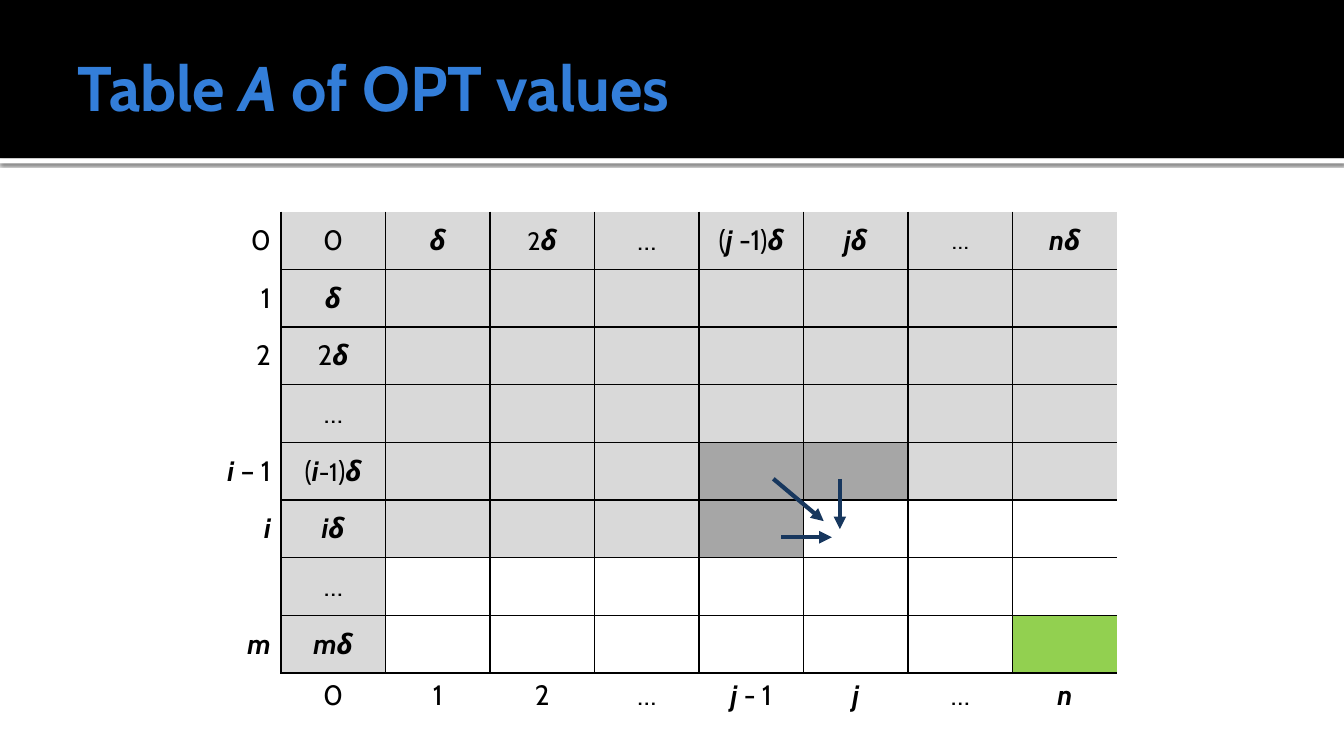
from itertools import groupby

from lxml import etree
from pptx import Presentation
from pptx.dml.color import RGBColor
from pptx.enum.shapes import MSO_CONNECTOR, MSO_SHAPE
from pptx.enum.text import MSO_ANCHOR, PP_ALIGN
from pptx.oxml import parse_xml
from pptx.oxml.ns import nsdecls, qn
from pptx.util import Inches, Pt

RECTANGLE = MSO_SHAPE.RECTANGLE
STRAIGHT = MSO_CONNECTOR.STRAIGHT
TOP, MIDDLE = MSO_ANCHOR.TOP, MSO_ANCHOR.MIDDLE
CENTER, RIGHT = PP_ALIGN.CENTER, PP_ALIGN.RIGHT

BLACK = RGBColor(0x00, 0x00, 0x00)
WHITE = RGBColor(0xFF, 0xFF, 0xFF)
TITLE_BLUE = RGBColor(0x33, 0x7E, 0xD9)
ARROW_BLUE = RGBColor(0x17, 0x37, 0x5E)
KNOWN_GRAY = RGBColor(0xD9, 0xD9, 0xD9)
SOURCE_GRAY = RGBColor(0xA6, 0xA6, 0xA6)
ANSWER_GREEN = RGBColor(0x92, 0xD0, 0x50)


def write(para, text, size=20, color=BLACK, bold=False, variables="ijmnδ", small=""):
    for (variable, reduced), letters in groupby(text, lambda c: (c in variables, c in small)):
        span = para.add_run()
        span.text = "".join(letters)
        span.font.name = "Cabin"
        span.font.size = Pt(18 if reduced else size)
        span.font.color.rgb = color
        span.font.bold = bold or variable
        span.font.italic = variable


def edge_line(side, visible):
    paint = f'<a:solidFill><a:srgbClr val="{BLACK}"/></a:solidFill>' if visible else "<a:noFill/>"
    return parse_xml(f'<a:{side} {nsdecls("a")} w="12700">{paint}</a:{side}>')


deck = Presentation()
deck.slide_width = Inches(13.33)
deck.slide_height = Inches(7.5)
page = deck.slides.add_slide(deck.slide_layouts[6])

for top, height, color in [(1.57, 0.05, WHITE), (0, 1.57, BLACK)]:
    band = page.shapes.add_shape(RECTANGLE, 0, Inches(top), Inches(13.33), Inches(height))
    band.shadow.inherit = False
    band.fill.solid()
    band.fill.fore_color.rgb = color
    band.line.fill.background()
    if color == WHITE:
        effects = band._element.spPr.find(qn("a:effectLst"))
        effects.append(parse_xml(
            f'<a:outerShdw {nsdecls("a")} blurRad="31750" dist="10160" dir="5400000" algn="tl" '
            'rotWithShape="0"><a:srgbClr val="000000"><a:alpha val="60000"/></a:srgbClr></a:outerShdw>'
        ))

title = page.shapes.add_textbox(Inches(0.67), Inches(0.17), Inches(12), Inches(1.37))
title.text_frame.word_wrap = True
title.text_frame.vertical_anchor = MIDDLE
title.text_frame.margin_right = Inches(0.05)
write(title.text_frame.paragraphs[0], "Table A of OPT values",
      size=45, color=TITLE_BLUE, bold=True, variables="A")

row_labels = ["0", "1", "2", "", "i – 1", "i", "", "m"]
first_column = ["0", "δ", "2δ", "…", "(i-1)δ", "iδ", "…", "mδ"]
first_row = ["0", "δ", "2δ", "…", "(j -1)δ", "jδ", "…", "nδ"]
column_labels = ["0", "1", "2", "…", "j - 1", "j", "…", "n"]
texts = {}
for index in range(8):
    texts[index, 0] = row_labels[index]
    texts[index, 1] = first_column[index]
    texts[0, index + 1] = first_row[index]
    texts[8, index + 1] = column_labels[index]
small_letters = {(0, 3): "2", (0, 7): "…", (4, 1): "-1"}
special_fills = {(4, 5): SOURCE_GRAY, (4, 6): SOURCE_GRAY, (5, 5): SOURCE_GRAY, (7, 8): ANSWER_GREEN}

table = page.shapes.add_table(9, 9, Inches(1.75), Inches(2.1), Inches(9.33), Inches(5.15)).table
table.first_row = False
table.horz_banding = False
for column in table.columns:
    column.width = Inches(9.33 / 9)
for row in table.rows:
    row.height = Inches(5.15 / 9)

for r in range(9):
    for c in range(9):
        cell = table.cell(r, c)
        cell.vertical_anchor = TOP if r == 8 else MIDDLE
        para = cell.text_frame.paragraphs[0]
        para.alignment = RIGHT if c == 0 else CENTER
        write(para, texts.get((r, c), ""), small=small_letters.get((r, c), ""))

        known = r < 8 and c > 0 and (r < 5 or c == 1 or (r == 5 and c < 5))
        fill_color = special_fills.get((r, c), KNOWN_GRAY if known else None)
        if fill_color is None:
            cell.fill.background()
        else:
            cell.fill.solid()
            cell.fill.fore_color.rgb = fill_color

        edges = {
            "lnL": c > 0 and r < 8,
            "lnR": c < 8 and r < 8,
            "lnT": r > 0 and c > 0,
            "lnB": r < 8 and c > 0,
        }
        properties = cell._tc.get_or_add_tcPr()
        for position, (side, visible) in enumerate(edges.items()):
            properties.insert(position, edge_line(side, visible))

for x1, y1, x2, y2 in [(8.33, 4.75, 8.33, 5.25), (7.67, 4.75, 8.17, 5.17), (7.75, 5.33, 8.25, 5.33)]:
    arrow = page.shapes.add_connector(STRAIGHT, Inches(x1), Inches(y1), Inches(x2), Inches(y2))
    arrow.line.color.rgb = ARROW_BLUE
    arrow.line.width = Pt(3)
    etree.SubElement(arrow.line._get_or_add_ln(), qn("a:tailEnd"), type="triangle")
    etree.SubElement(arrow._element.spPr, qn("a:effectLst"))

deck.save("out.pptx")
